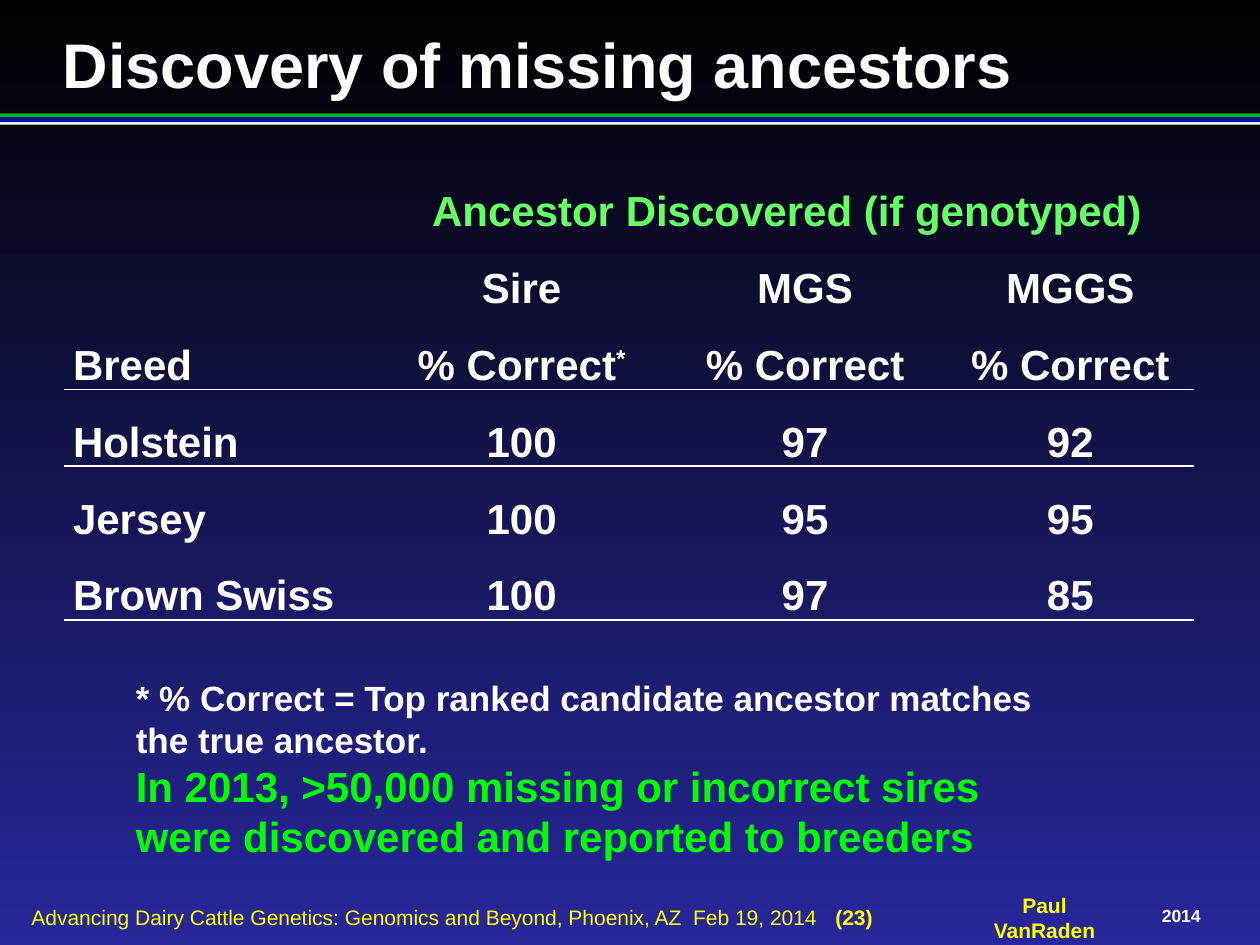
from lxml import etree
from pptx import Presentation
from pptx.dml.color import RGBColor
from pptx.enum.shapes import MSO_SHAPE
from pptx.enum.text import MSO_ANCHOR, PP_ALIGN
from pptx.oxml.ns import qn
from pptx.util import Inches, Pt

LEFT, CENTER = PP_ALIGN.LEFT, PP_ALIGN.CENTER
TOP, MIDDLE, BOTTOM = MSO_ANCHOR.TOP, MSO_ANCHOR.MIDDLE, MSO_ANCHOR.BOTTOM
RECTANGLE = MSO_SHAPE.RECTANGLE
PLAIN_TABLE_STYLE = "{2D5ABB26-0587-4C30-8999-92F81FD0307C}"

THEME = {
    "font": "Arial",
    "white": "FFFFFF", "yellow": "FFFF00", "heading": "66FF66", "finding": "00FF00",
    "sky_top": "000000", "sky_bottom": "27279B",
    "green_band": "01AF00", "blue_band": "001799",
    "title_size": 36, "table_size": 24, "note_size": 20,
    "footer_size": 12, "year_size": 10,
}

# Content
TITLE = "Discovery of missing ancestors"
SPAN_HEADING = "Ancestor Discovered (if genotyped)"
FOOTNOTE_MARK = "*"
TABLE_ROWS = [
    ("", SPAN_HEADING, "", ""),
    ("", "Sire", "MGS", "MGGS"),
    ("Breed", "% Correct", "% Correct", "% Correct"),
    ("Holstein", "100", "97", "92"),
    ("Jersey", "100", "95", "95"),
    ("Brown Swiss", "100", "97", "85"),
]
COLUMN_WIDTHS = (2.5, 2.26, 2.24, 1.97)
ROW_HEIGHT = 0.61
HEADER_ROW, LAST_ROW = 2, 5
NOTES = [
    ("* % Correct = Top ranked candidate ancestor matches the true ancestor.", "note_size", "white"),
    ("In 2013, >50,000 missing or incorrect sires were discovered and reported to breeders",
     "table_size", "finding"),
]
EVENT = "Advancing Dairy Cattle Genetics: Genomics and Beyond, Phoenix, AZ  Feb 19, 2014"
PAGE = "(23)"
AUTHOR = "Paul VanRaden"
YEAR = "2014"
BANDS = [(0.9, 0.03, "green_band"), (0.96, 0.03, "white"), (0.93, 0.04, "blue_band")]


def color(name):
    return RGBColor.from_string(THEME[name])


def style(font, size, color_name, bold=True):
    font.name = THEME["font"]
    font.size = Pt(THEME[size])
    font.bold = bold
    font.color.rgb = color(color_name)


def add_text(slide, box, lines, align=LEFT, anchor=TOP, margins=(0, 0), bold=True):
    frame = slide.shapes.add_textbox(*map(Inches, box)).text_frame
    frame.word_wrap = True
    frame.vertical_anchor = anchor
    frame.margin_left = frame.margin_right = Inches(margins[0])
    frame.margin_top = frame.margin_bottom = Inches(margins[1])
    frame.text = "\n".join(text for text, _, _ in lines)
    for paragraph, (_, size, color_name) in zip(frame.paragraphs, lines):
        paragraph.alignment = align
        for run in paragraph.runs:
            style(run.font, size, color_name, bold)
    return frame


def add_rule(cell, side):
    line = etree.Element(qn(f"a:{side}"), w=str(Pt(1)))
    fill = etree.SubElement(line, qn("a:solidFill"))
    etree.SubElement(fill, qn("a:srgbClr"), val=THEME["white"])
    cell._tc.get_or_add_tcPr().insert(0, line)


def add_table(slide):
    table = slide.shapes.add_table(
        len(TABLE_ROWS), len(COLUMN_WIDTHS), Inches(0.51), Inches(1.26),
        Inches(sum(COLUMN_WIDTHS)), Inches(ROW_HEIGHT * len(TABLE_ROWS))).table
    table.first_row = table.horz_banding = False
    table._tbl.tblPr.find(qn("a:tableStyleId")).text = PLAIN_TABLE_STYLE
    for column, width in zip(table.columns, COLUMN_WIDTHS):
        column.width = Inches(width)
    for row in table.rows:
        row.height = Inches(ROW_HEIGHT)
    table.cell(0, 1).merge(table.cell(0, 3))

    for r, values in enumerate(TABLE_ROWS):
        for c, value in enumerate(values):
            cell = table.cell(r, c)
            cell.fill.background()
            cell.vertical_anchor = BOTTOM
            cell.margin_left = cell.margin_right = Inches(0.07)
            cell.margin_top = cell.margin_bottom = 0
            if r in (HEADER_ROW, LAST_ROW):
                add_rule(cell, "lnB")
            if r == HEADER_ROW + 1:
                add_rule(cell, "lnT")
            if not value:
                continue
            cell.text = value
            paragraph = cell.text_frame.paragraphs[0]
            paragraph.alignment = CENTER if c else LEFT
            paragraph.line_spacing = 1.15
            style(paragraph.runs[0].font, "table_size", "white" if r else "heading")

    # Footnote mark on the first "% Correct"
    mark = table.cell(HEADER_ROW, 1).text_frame.paragraphs[0].add_run()
    mark.text = FOOTNOTE_MARK
    style(mark.font, "table_size", "white")
    mark.font._element.set("baseline", "30000")


def add_footer(slide):
    add_text(slide, (7.74, 7.18, 1.1, 0.2), [(AUTHOR, "footer_size", "yellow")], CENTER, MIDDLE)
    add_text(slide, (9.07, 7.18, 0.61, 0.17), [(YEAR, "year_size", "white")], CENTER, MIDDLE)
    event = add_text(slide, (0.25, 7.18, 6.8, 0.2), [(EVENT, "footer_size", "yellow")],
                     anchor=MIDDLE, bold=False).paragraphs[0]
    tabs = etree.SubElement(event._p.get_or_add_pPr(), qn("a:tabLst"))
    etree.SubElement(tabs, qn("a:tab"), pos=str(Inches(6.38)), algn="l")
    page = event.add_run()
    page.text = "\t" + PAGE
    style(page.font, "footer_size", "yellow")


def main():
    deck = Presentation()
    deck.slide_width, deck.slide_height = Inches(10), Inches(7.5)
    slide = deck.slides.add_slide(deck.slide_layouts[6])

    # Background, dark at the top
    sky = slide.background.fill
    sky.gradient()
    sky.gradient_angle = 270
    for stop, position, name in zip(sky.gradient_stops, (0, 1), ("sky_top", "sky_bottom")):
        stop.position = position
        stop.color.rgb = color(name)

    # Bands under the title
    for top, height, name in BANDS:
        band = slide.shapes.add_shape(RECTANGLE, 0, Inches(top), deck.slide_width, Inches(height))
        band.shadow.inherit = False
        band.fill.solid()
        band.fill.fore_color.rgb = color(name)
        band.line.fill.background()

    add_footer(slide)
    add_text(slide, (0.5, 0.2, 9, 0.6), [(TITLE, "title_size", "white")])
    add_table(slide)
    add_text(slide, (0.98, 5.32, 7.33, 1.58), NOTES, margins=(0.1, 0.05))
    deck.save("out.pptx")


if __name__ == "__main__":
    main()
